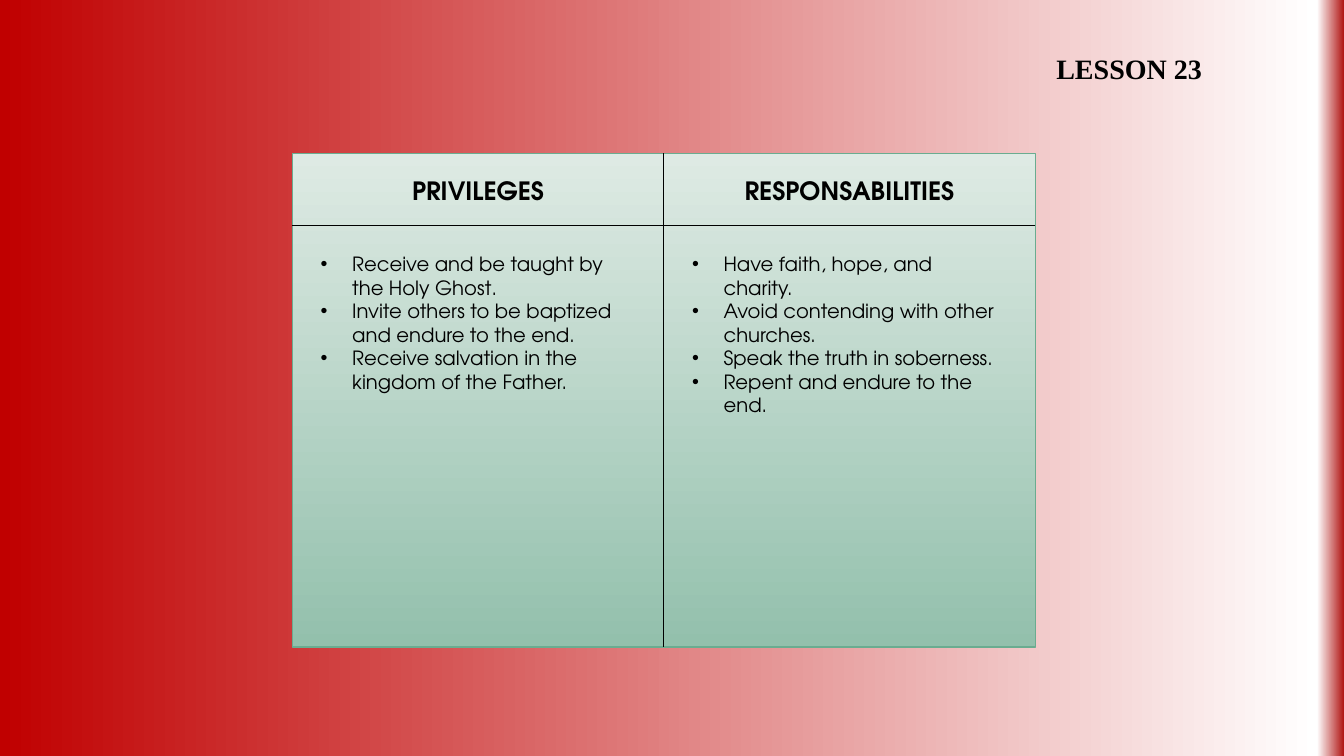
from copy import deepcopy

from lxml.etree import SubElement
from pptx import Presentation
from pptx.dml.color import RGBColor
from pptx.enum.shapes import MSO_CONNECTOR, MSO_SHAPE
from pptx.enum.text import MSO_AUTO_SIZE, PP_ALIGN
from pptx.oxml.ns import qn
from pptx.util import Pt

LESSON = "LESSON 23"
COLUMNS = [
    ("PRIVILEGES", [
        "Receive and be taught by the Holy Ghost.",
        "Invite others to be baptized and endure to the end.",
        "Receive salvation in the kingdom of the Father.",
    ]),
    ("RESPONSABILITIES", [
        "Have faith, hope, and charity.",
        "Avoid contending with other churches.",
        "Speak the truth in soberness.",
        "Repent and endure to the end.",
    ]),
]
COLORS = {
    "text": "000000",
    "red": "C00000",
    "white": "FFFFFF",
    "edge red": "B01513",
    "light green": "DEEAE4",
    "green": "93C0AC",
    "border": "6AAC90",
}
BODY_FONT = "TeX Gyre Adventor"
TITLE_FONT = "Times New Roman"

PANEL_LEFT, PANEL_TOP, PANEL_WIDTH, PANEL_HEIGHT = 208.8, 109.4, 530.6, 352.8
HEADER_HEIGHT = 51.9
COLUMN_WIDTH = PANEL_WIDTH / 2
TEXT_WIDTH = 239
TEXT_INSET = (COLUMN_WIDTH - TEXT_WIDTH) / 2
BULLET_INDENT = 22.5


def color(name):
    return RGBColor.from_string(COLORS[name])


def set_gradient(fill, element, stops, angle):
    """Fill with (position, color name) stops; element is the XML that holds the fill."""
    fill.gradient()
    fill.gradient_angle = angle
    stop_list = next(element.iter(qn("a:gsLst")))
    while len(stop_list) < len(stops):
        stop_list.append(deepcopy(stop_list[-1]))
    for stop, (position, name) in zip(fill.gradient_stops, stops):
        stop.position = position
        stop.color.rgb = color(name)


def add_line(slide, x1, y1, x2, y2):
    line = slide.shapes.add_connector(
        MSO_CONNECTOR.STRAIGHT, Pt(x1), Pt(y1), Pt(x2), Pt(y2))
    line.line.color.rgb = color("text")
    line.line.width = Pt(0.75)
    SubElement(line._element.spPr, qn("a:effectLst"))


def add_bullet(paragraph):
    properties = paragraph._p.get_or_add_pPr()
    properties.set("marL", str(Pt(BULLET_INDENT)))
    properties.set("indent", str(-Pt(BULLET_INDENT)))
    SubElement(properties, qn("a:buFont")).set("typeface", "Arial")
    SubElement(properties, qn("a:buChar")).set("char", "•")


def add_text(slide, box, lines, size, font_name=BODY_FONT, bold=False,
             alignment=PP_ALIGN.LEFT, bulleted=False):
    frame = slide.shapes.add_textbox(*map(Pt, box)).text_frame
    frame.word_wrap = True
    frame.auto_size = MSO_AUTO_SIZE.SHAPE_TO_FIT_TEXT
    for index, line in enumerate(lines):
        paragraph = frame.add_paragraph() if index else frame.paragraphs[0]
        paragraph.alignment = alignment
        if bulleted:
            add_bullet(paragraph)
        run = paragraph.add_run()
        run.text = line
        run.font.name = font_name
        run.font.size = Pt(size)
        run.font.bold = bold
        run.font.color.rgb = color("text")


def add_panel(slide):
    panel = slide.shapes.add_shape(
        MSO_SHAPE.RECTANGLE,
        *map(Pt, (PANEL_LEFT, PANEL_TOP, PANEL_WIDTH, PANEL_HEIGHT)))
    panel.shadow.inherit = False
    set_gradient(panel.fill, panel._element,
                 [(0, "light green"), (1, "green")], 270)
    panel.line.color.rgb = color("border")
    panel.line.width = Pt(0.75)

    middle = PANEL_LEFT + COLUMN_WIDTH
    header_bottom = PANEL_TOP + HEADER_HEIGHT
    add_line(slide, middle, PANEL_TOP, middle, PANEL_TOP + PANEL_HEIGHT)
    add_line(slide, PANEL_LEFT, header_bottom,
             PANEL_LEFT + PANEL_WIDTH, header_bottom)


def main():
    presentation = Presentation()
    presentation.slide_width = Pt(960)
    presentation.slide_height = Pt(540)
    slide = presentation.slides.add_slide(presentation.slide_layouts[6])
    set_gradient(slide.background.fill, slide.element,
                 [(0, "red"), (0.98, "white"), (1, "edge red")], 0)

    add_text(slide, (747.4, 33.1, 123.1, 36.7), [LESSON], 20, TITLE_FONT, bold=True)
    add_panel(slide)
    for index, (heading, points) in enumerate(COLUMNS):
        left = PANEL_LEFT + index * COLUMN_WIDTH + TEXT_INSET
        add_text(slide, (left, 121.7, TEXT_WIDTH, 28.8), [heading], 18,
                 bold=True, alignment=PP_ALIGN.CENTER)
        add_text(slide, (left, 176.6, TEXT_WIDTH, 7.2 + 17 * 6), points, 14,
                 bulleted=True)
    presentation.save("out.pptx")


if __name__ == "__main__":
    main()
